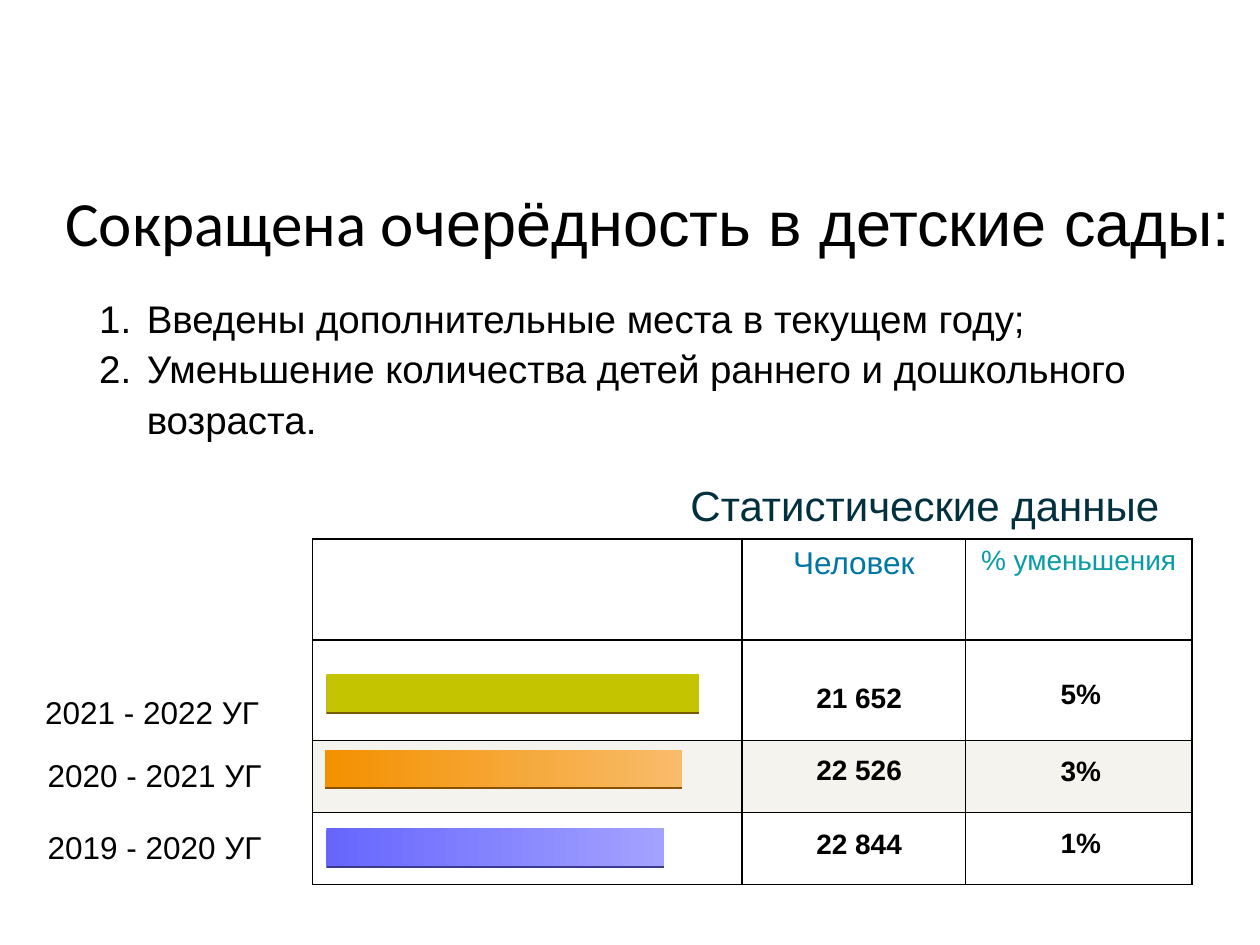
from typing import NamedTuple

from lxml import etree
from pptx import Presentation
from pptx.dml import color
from pptx.enum import shapes, text
from pptx.oxml import ns
from pptx.util import Cm, Pt

BLACK = "000000"
LEFT, CENTER = text.PP_ALIGN.LEFT, text.PP_ALIGN.CENTER


class Box(NamedTuple):
    left: float
    top: float
    width: float
    height: float


class Label(NamedTuple):
    wording: str
    box: Box
    size: float
    alignment: text.PP_ALIGN = LEFT
    bold: bool = False
    color: str = BLACK
    spacing: float = 1.0


class Year(NamedTuple):
    name: Label
    people: Label
    decrease: Label
    bar: Box
    bar_colors: tuple[str, str]
    edge: str


def year_label(wording: str, left: float, top: float) -> Label:
    return Label(wording, Box(left, top, 5.46, 1.02), 18)


def value_label(wording: str, left: float, top: float) -> Label:
    return Label(wording, Box(left, top, 2.44, 0.94), 16, CENTER, True)


PEOPLE_LEFT, DECREASE_LEFT = 16.1, 20.57
YEARS = [
    Year(year_label("2021 - 2022 УГ", 0.66, 13.84),
         value_label("21 652", PEOPLE_LEFT, 13.59),
         value_label("5%", DECREASE_LEFT, 13.51),
         Box(6.58, 13.59, 7.52, 0.76), ("C4C400", "C4C400"), "7A5A00"),
    Year(year_label("2020 - 2021 УГ", 0.71, 15.11),
         value_label("22 526", PEOPLE_LEFT, 15.04),
         value_label("3%", DECREASE_LEFT, 15.06),
         Box(6.55, 15.11, 7.21, 0.76), ("F49100", "F8BC6A"), "8A5200"),
    Year(year_label("2019 - 2020 УГ", 0.71, 16.56),
         value_label("22 844", PEOPLE_LEFT, 16.54),
         value_label("1%", DECREASE_LEFT, 16.51),
         Box(6.58, 16.69, 6.81, 0.76), ("6666FF", "A4A2FF"), "3A3A91"),
]
HEADING = Label("Статистические данные", Box(13.67, 9.45, 11.05, 1.4), 24,
                color="02303E", spacing=1.1)
REASONS = ["Введены дополнительные места в текущем году;",
           "Уменьшение количества детей раннего и дошкольного возраста."]
HEADERS = [("", 18, BLACK), ("Человек", 18, "0076A3"),
           ("% уменьшения", 16, "089CA3")]


def rgb(value: str) -> color.RGBColor:
    return color.RGBColor.from_string(value)


def place(box: Box) -> list[Cm]:
    return [Cm(length) for length in box]


def format_font(font, size: float, value: str, name: str = "Arial",
                bold: bool = False) -> None:
    font.name, font.size, font.bold = name, Pt(size), bold
    font.color.rgb = rgb(value)


def add_box(slide, box: Box):
    frame = slide.shapes.add_textbox(*place(box)).text_frame
    frame.word_wrap = True
    return frame


def add_label(slide, label: Label) -> None:
    frame = add_box(slide, label.box)
    frame.text = label.wording
    paragraph = frame.paragraphs[0]
    paragraph.alignment = label.alignment
    paragraph.line_spacing = label.spacing
    format_font(paragraph.runs[0].font, label.size, label.color,
                bold=label.bold)


def add_title(slide) -> None:
    frame = add_box(slide, Box(0.86, 3.56, 24.41, 1.8))
    frame.vertical_anchor = text.MSO_ANCHOR.MIDDLE
    paragraph = frame.paragraphs[0]
    paragraph.alignment = CENTER
    for wording, name in [("Сокращена о", "Calibri"),
                          ("черёдность в детские сады:", "Arial")]:
        run = paragraph.add_run()
        run.text = wording
        format_font(run.font, 36, BLACK, name)


def add_reasons(slide) -> None:
    frame = add_box(slide, Box(1.75, 5.72, 23.14, 3.35))
    frame.text = "\n".join(REASONS)
    for paragraph in frame.paragraphs:
        properties = paragraph._p.get_or_add_pPr()
        properties.set("marL", str(Cm(0.96)))
        properties.set("indent", str(-Cm(0.96)))
        etree.SubElement(properties, ns.qn("a:buFont"), typeface="Arial")
        etree.SubElement(properties, ns.qn("a:buAutoNum"), type="arabicPeriod")
        paragraph.line_spacing = 1.1
        format_font(paragraph.runs[0].font, 22, BLACK)


def add_solid(parent, value: str):
    fill = etree.SubElement(parent, ns.qn("a:solidFill"))
    return etree.SubElement(fill, ns.qn("a:srgbClr"), val=value)


def format_cell(cell, shaded: bool) -> None:
    properties = cell._tc.get_or_add_tcPr()
    for side in ("lnL", "lnR", "lnT", "lnB"):
        border = etree.SubElement(properties, ns.qn(f"a:{side}"), w=str(Pt(1)))
        add_solid(border, BLACK)
    if shaded:
        shade = add_solid(properties, "EDE9DF")
        etree.SubElement(shade, ns.qn("a:alpha"), val="50000")
    else:
        cell.fill.background()


def add_grid(slide) -> None:
    widths, heights = [8.66, 4.5, 4.57], [2.03, 2.03, 1.45, 1.45]
    box = Box(6.3, 10.87, sum(widths), sum(heights))
    table = slide.shapes.add_table(len(heights), len(widths),
                                   *place(box)).table
    table.first_row = table.horz_banding = False
    for column, width in zip(table.columns, widths):
        column.width = Cm(width)
    for index, (row, height) in enumerate(zip(table.rows, heights)):
        row.height = Cm(height)
        for cell in row.cells:
            format_cell(cell, shaded=index == 2)
    for cell, (wording, size, value) in zip(table.rows[0].cells, HEADERS):
        if wording:
            cell.text = wording
            paragraph = cell.text_frame.paragraphs[0]
            paragraph.alignment = CENTER
            format_font(paragraph.runs[0].font, size, value)


def add_bar(slide, year: Year) -> None:
    shape = slide.shapes.add_shape(shapes.MSO_SHAPE.RECTANGLE,
                                   *place(year.bar))
    shape.line.fill.background()
    shape.fill.gradient()
    shape.fill.gradient_angle = 0
    for stop, value in zip(shape.fill.gradient_stops, year.bar_colors):
        stop.color.rgb = rgb(value)
    shape.shadow.inherit = False
    effects = shape._element.spPr.find(ns.qn("a:effectLst"))
    shadow = etree.SubElement(effects, ns.qn("a:outerShdw"), blurRad="0",
                              dist=str(Cm(0.04)), dir="5400000")
    etree.SubElement(shadow, ns.qn("a:srgbClr"), val=year.edge)


def main() -> None:
    presentation = Presentation()
    presentation.slide_width, presentation.slide_height = Cm(25.4), Cm(19.05)
    slide = presentation.slides.add_slide(presentation.slide_layouts[6])
    add_title(slide)
    add_grid(slide)
    add_reasons(slide)
    add_label(slide, HEADING)
    for year in YEARS:
        add_bar(slide, year)
        for label in (year.name, year.people, year.decrease):
            add_label(slide, label)
    presentation.save("out.pptx")


if __name__ == "__main__":
    main()
